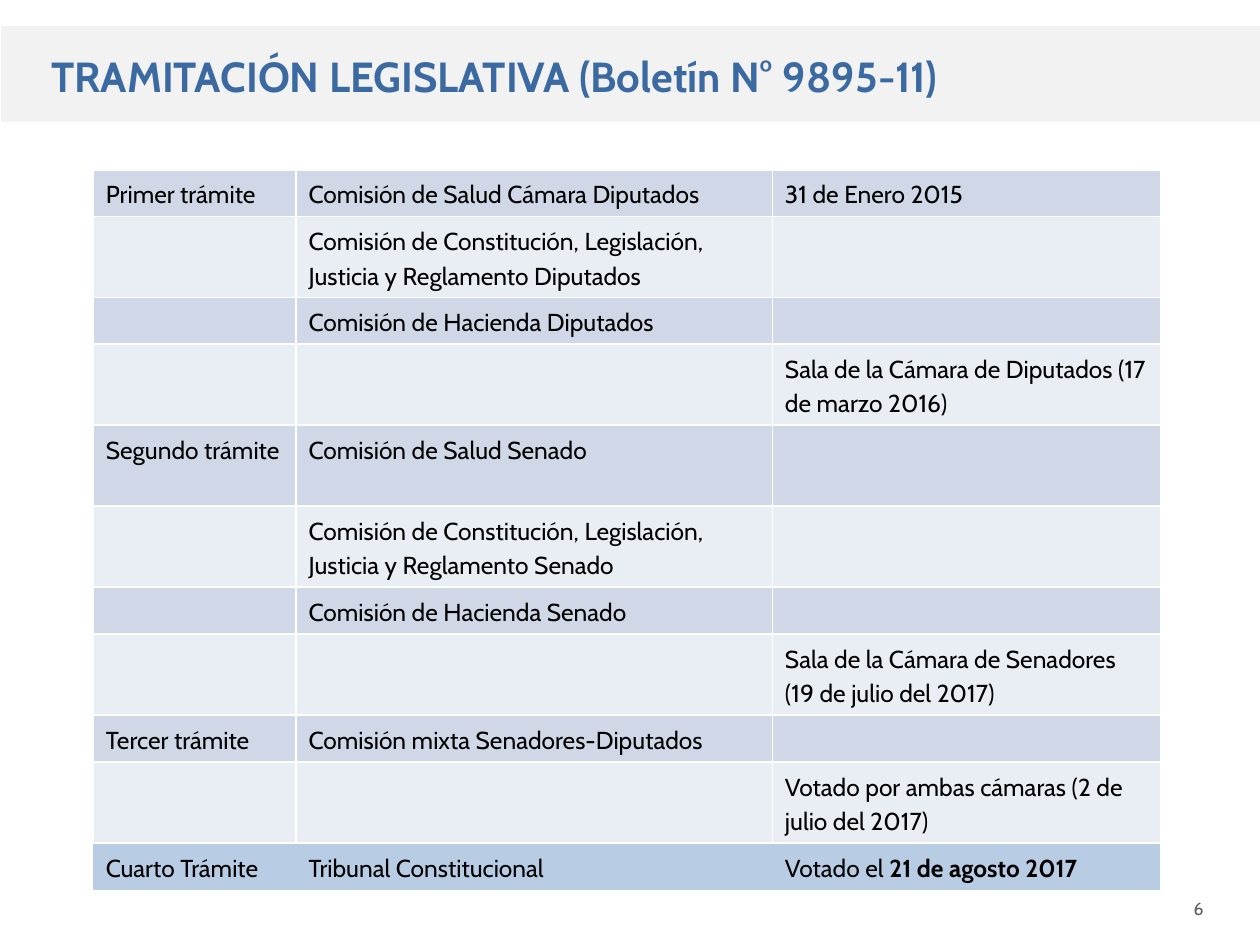
from lxml.etree import SubElement
from pptx import Presentation
from pptx.dml.color import RGBColor
from pptx.enum.shapes import MSO_SHAPE as Shape
from pptx.enum.text import MSO_ANCHOR as Anchor, PP_ALIGN as Align
from pptx.oxml.ns import qn
from pptx.util import Pt

COLORS = {
    "band": "F2F2F2",
    "title": "3B6AA2",
    "text": "000000",
    "number": "595959",
    "odd_row": "D0D8E8",
    "even_row": "E9EDF4",
    "last_row": "B8CCE4",
    "border": "FFFFFF",
}
SINGLE, DOUBLE = 26.8, 46.3
COLUMN_WIDTHS = [115.9, 272.2, 221.8]
ROWS = [
    (SINGLE, "Primer trámite", "Comisión de Salud Cámara Diputados", "31 de Enero 2015"),
    (DOUBLE, "", "Comisión de Constitución, Legislación, Justicia y Reglamento Diputados", ""),
    (SINGLE, "", "Comisión de Hacienda Diputados", ""),
    (DOUBLE, "", "", "Sala de la Cámara de Diputados (17 de marzo 2016)"),
    (DOUBLE, "Segundo trámite", "Comisión de Salud Senado", ""),
    (DOUBLE, "", "Comisión de Constitución, Legislación, Justicia y Reglamento Senado", ""),
    (SINGLE, "", "Comisión de Hacienda Senado", ""),
    (DOUBLE, "", "", "Sala de la Cámara de Senadores (19 de julio del 2017)"),
    (SINGLE, "Tercer trámite", "Comisión mixta Senadores-Diputados", ""),
    (DOUBLE, "", "", "Votado por ambas cámaras (2 de julio del 2017)"),
    (SINGLE, "Cuarto Trámite", "Tribunal Constitucional", "Votado el "),
]


def format_runs(paragraph, size, color, bold=False):
    for run in paragraph.runs:
        run.font.name = "Cabin"
        run.font.size = Pt(size)
        run.font.bold = bold
        run.font.color.rgb = RGBColor.from_string(COLORS[color])


def set_borders(cell, widths):
    properties = cell._tc.get_or_add_tcPr()
    for position, (side, width) in enumerate(widths.items()):
        line = properties.makeelement(qn(f"a:ln{side}"), {"w": str(Pt(width))})
        if width:
            fill = SubElement(line, qn("a:solidFill"))
            SubElement(fill, qn("a:srgbClr"), val=COLORS["border"])
        else:
            SubElement(line, qn("a:noFill"))
        properties.insert(position, line)


presentation = Presentation()
presentation.slide_width = Pt(720)
presentation.slide_height = Pt(540)
slide = presentation.slides.add_slide(presentation.slide_layouts[6])

number_box = slide.shapes.add_textbox(Pt(662.4), Pt(509.8), Pt(32.4), Pt(19.4))
paragraph = number_box.text_frame.paragraphs[0]
paragraph.text = "6"
paragraph.alignment = Align.RIGHT
format_runs(paragraph, 10, "number")

band = slide.shapes.add_shape(Shape.RECTANGLE, Pt(0.7), Pt(15), Pt(720), Pt(54.5))
band.shadow.inherit = False
band.fill.solid()
band.fill.fore_color.rgb = RGBColor.from_string(COLORS["band"])
band.line.fill.background()

title_box = slide.shapes.add_textbox(Pt(22.3), Pt(25.2), Pt(688.3), Pt(31))
title_box.text_frame.word_wrap = True
paragraph = title_box.text_frame.paragraphs[0]
paragraph.text = "TRAMITACIÓN LEGISLATIVA (Boletín N° 9895-11)"
format_runs(paragraph, 24, "title", bold=True)

table_height = sum(row[0] for row in ROWS)
table = slide.shapes.add_table(
    len(ROWS), len(COLUMN_WIDTHS), Pt(53.3), Pt(96.8), Pt(sum(COLUMN_WIDTHS)), Pt(table_height)
).table
table.first_row = False
table.horz_banding = False
for column, width in zip(table.columns, COLUMN_WIDTHS):
    column.width = Pt(width)

for row_index, (height, *texts) in enumerate(ROWS):
    table.rows[row_index].height = Pt(height)
    is_last = row_index == len(ROWS) - 1
    row_color = "last_row" if is_last else ("odd_row", "even_row")[row_index % 2]
    side_width = 0 if is_last else 1
    top_width = 1.5 if row_index == 0 else 1
    for column_index, text in enumerate(texts):
        cell = table.cell(row_index, column_index)
        cell.fill.solid()
        cell.fill.fore_color.rgb = RGBColor.from_string(COLORS[row_color])
        set_borders(cell, {"L": side_width, "R": side_width, "T": top_width, "B": side_width})
        cell.vertical_anchor = Anchor.BOTTOM if is_last else Anchor.TOP
        paragraph = cell.text_frame.paragraphs[0]
        paragraph.line_spacing = 1.15
        if text:
            paragraph.text = text
            format_runs(paragraph, 14, "text")
        else:
            SubElement(paragraph._p, qn("a:endParaRPr"), sz="1400")

paragraph = table.cell(len(ROWS) - 1, 2).text_frame.paragraphs[0]
paragraph.add_run().text = "21 de agosto 2017"
format_runs(paragraph, 14, "text")
paragraph.runs[-1].font.bold = True

presentation.save("out.pptx")
